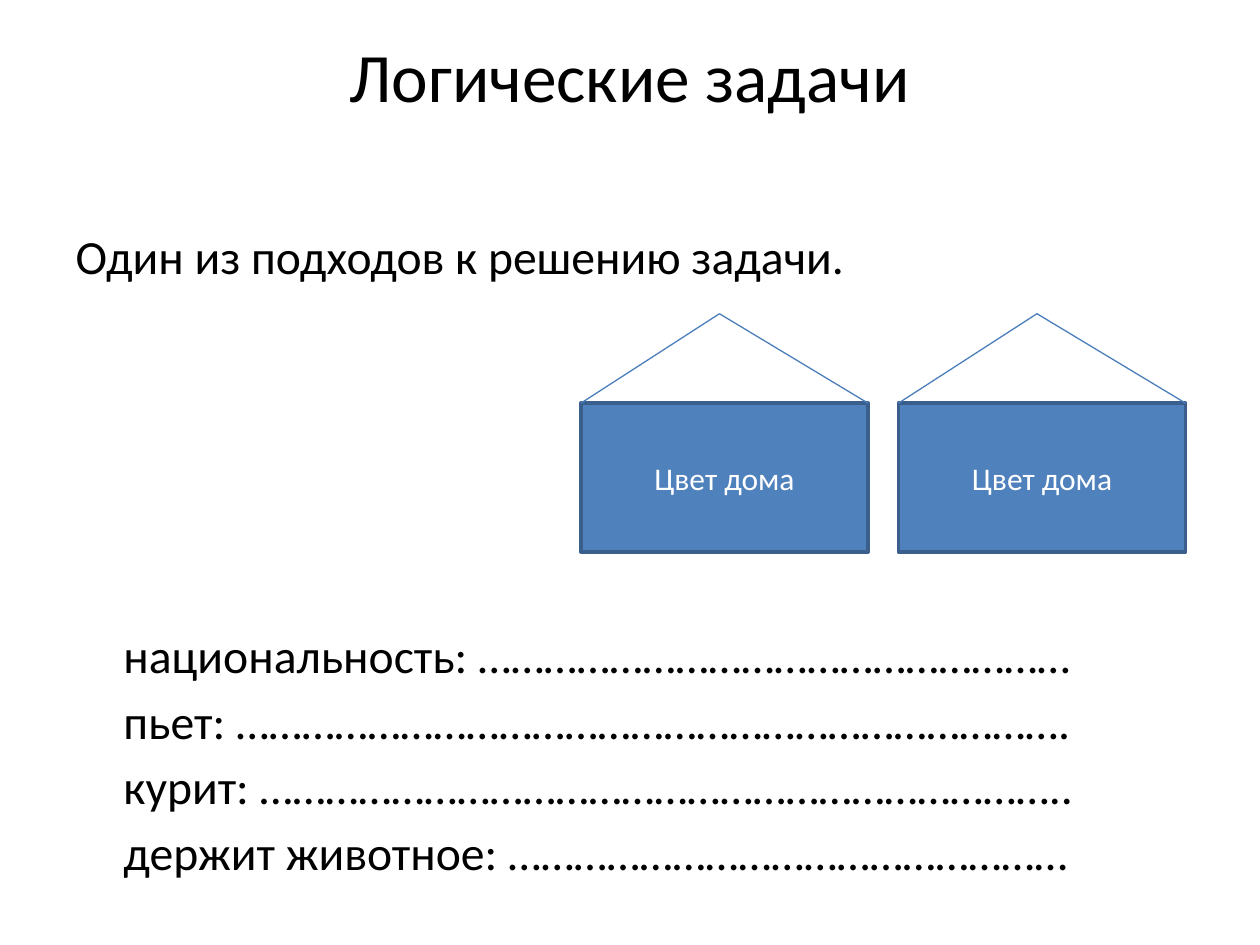
import pptx
import pptx.dml.color
import pptx.enum.shapes
import pptx.enum.text
import pptx.oxml.xmlchemy
import pptx.util
from pptx.util import Inches

BLACK = pptx.dml.color.RGBColor(0x00, 0x00, 0x00)
WHITE = pptx.dml.color.RGBColor(0xFF, 0xFF, 0xFF)
WALL_FILL = pptx.dml.color.RGBColor(0x4F, 0x81, 0xBD)
WALL_LINE = pptx.dml.color.RGBColor(0x3A, 0x5F, 0x8C)
ROOF_LINE = pptx.dml.color.RGBColor(0x4B, 0x7E, 0xBC)

FONT = "Calibri"
BODY_SIZE = 27.2
LINE_SPACE = 4.9
HOUSE_SPACE = 195.4
INTRODUCTION = "Один из подходов к решению задачи."
QUESTIONS = [
    "национальность: ………………………………………………",
    "пьет: ………………………………………………………………….",
    "курит: ………………………………………………………………..",
    "держит животное: ……………………………………………",
]
HOUSE_LEFTS = [4.61, 7.13]
WALL_TOP, WALL_WIDTH, WALL_HEIGHT = 3.2, 2.28, 1.18
RIDGE_OFFSET, RIDGE_TOP = 1.1, 2.49


def add_run(paragraph, text, size, color):
    run = paragraph.add_run()
    run.text = text
    run.font.name = FONT
    run.font.size = pptx.util.Pt(size)
    run.font.color.rgb = color


def place(shape, left, top, width, height):
    shape.left, shape.top = Inches(left), Inches(top)
    shape.width, shape.height = Inches(width), Inches(height)


def fill_title(title):
    place(title, 0.5, 0.26, 9, 1.25)
    frame = title.text_frame
    frame.auto_size = pptx.enum.text.MSO_AUTO_SIZE.NONE
    frame.vertical_anchor = pptx.enum.text.MSO_ANCHOR.TOP
    frame.margin_top = 0
    paragraph = frame.paragraphs[0]
    paragraph.alignment = pptx.enum.text.PP_ALIGN.CENTER
    add_run(paragraph, "Логические задачи", 39.6, BLACK)


def format_line(paragraph, text, indent, space):
    properties = paragraph._p.get_or_add_pPr()
    properties.set("marL", str(Inches(indent)))
    properties.set("indent", "0")
    paragraph.space_before = pptx.util.Pt(space)
    properties.append(pptx.oxml.xmlchemy.OxmlElement("a:buNone"))
    add_run(paragraph, text, BODY_SIZE, BLACK)


def fill_body(body):
    place(body, 0.5, 1.75, 9, 4.95)
    frame = body.text_frame
    frame.auto_size = pptx.enum.text.MSO_AUTO_SIZE.NONE
    format_line(frame.paragraphs[0], INTRODUCTION, 0, LINE_SPACE)
    for index, question in enumerate(QUESTIONS):
        space = LINE_SPACE if index else HOUSE_SPACE
        format_line(frame.add_paragraph(), question, 0.38, space)


def add_wall(slide, left):
    wall = slide.shapes.add_shape(
        pptx.enum.shapes.MSO_SHAPE.RECTANGLE,
        Inches(left), Inches(WALL_TOP), Inches(WALL_WIDTH), Inches(WALL_HEIGHT))
    wall.shadow.inherit = False
    wall.fill.solid()
    wall.fill.fore_color.rgb = WALL_FILL
    wall.line.color.rgb = WALL_LINE
    wall.line.width = pptx.util.Pt(2)
    wall.text_frame.vertical_anchor = pptx.enum.text.MSO_ANCHOR.MIDDLE
    paragraph = wall.text_frame.paragraphs[0]
    paragraph.alignment = pptx.enum.text.PP_ALIGN.CENTER
    add_run(paragraph, "Цвет дома", 18, WHITE)


def add_roof_line(slide, start, end):
    line = slide.shapes.add_connector(
        pptx.enum.shapes.MSO_CONNECTOR.STRAIGHT,
        *(Inches(value) for value in start + end))
    line.line.color.rgb = ROOF_LINE
    line.line.width = pptx.util.Pt(0.75)
    line._element.spPr.append(pptx.oxml.xmlchemy.OxmlElement("a:effectLst"))


def add_house(slide, left):
    ridge = (left + RIDGE_OFFSET, RIDGE_TOP)
    add_wall(slide, left)
    add_roof_line(slide, (left, WALL_TOP), ridge)
    add_roof_line(slide, ridge, (left + WALL_WIDTH, WALL_TOP))


def main():
    presentation = pptx.Presentation()
    presentation.slide_width = Inches(10)
    presentation.slide_height = Inches(7.5)
    slide = presentation.slides.add_slide(presentation.slide_layouts[1])
    fill_title(slide.shapes.title)
    fill_body(slide.placeholders[1])
    for left in HOUSE_LEFTS:
        add_house(slide, left)
    presentation.save("out.pptx")


if __name__ == "__main__":
    main()
